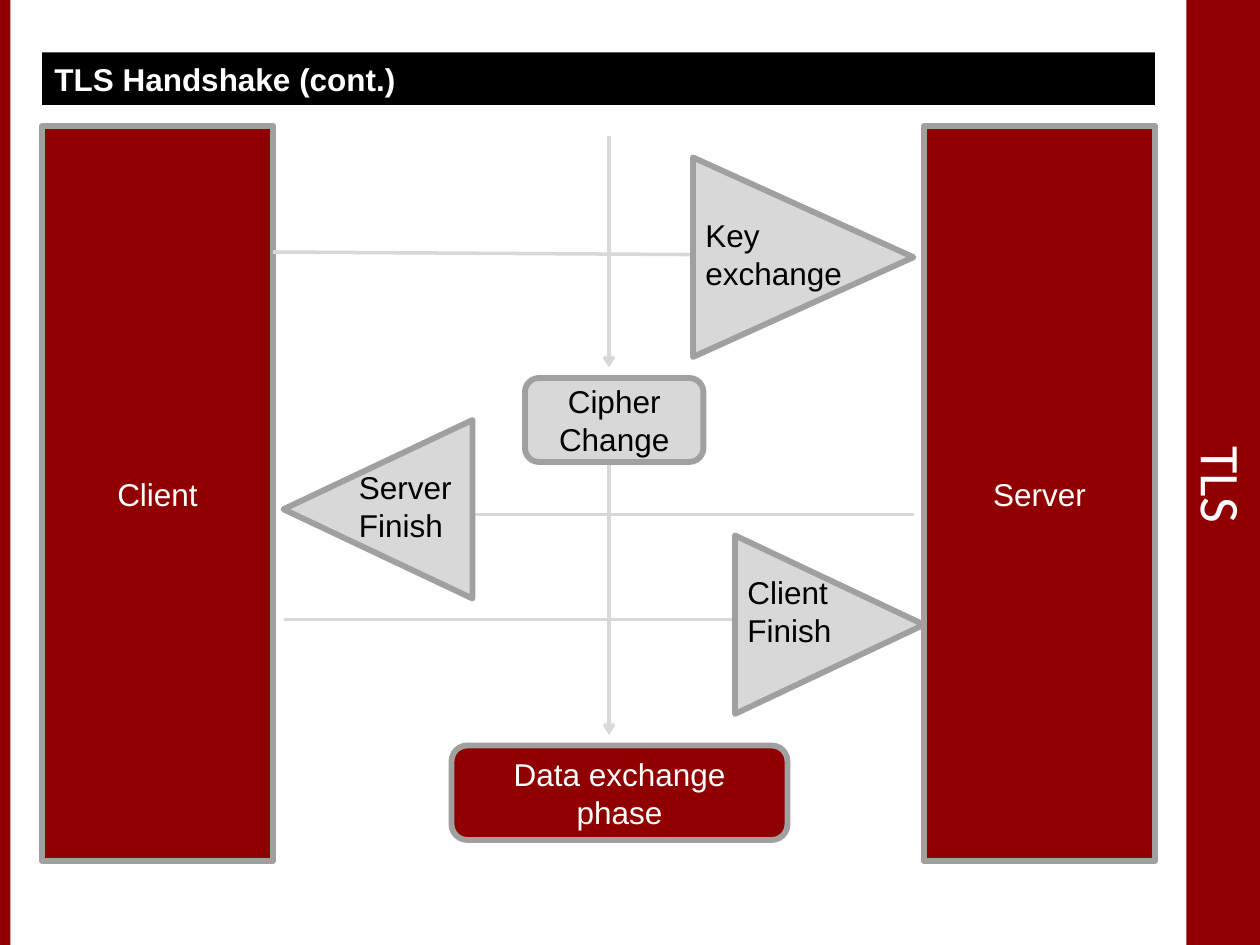
from dataclasses import dataclass

from pptx import Presentation
from pptx import util as u
from pptx.dml.color import RGBColor
from pptx.enum import shapes, text
from pptx.oxml.ns import qn
from lxml import etree

PX = 9525  # EMU per px, 96 px to the inch
W, H = 960, 720
SHAPE = shapes.MSO_SHAPE
ALIGN = text.PP_ALIGN
ANCHOR = text.MSO_ANCHOR


@dataclass(frozen=True)
class Theme:
    red: str = "900000"
    grey: str = "D8D8D8"
    border: str = "A0A0A0"
    white: str = "FFFFFF"
    black: str = "000000"
    body_font: str = "Arial"
    title_font: str = "Calibri"
    body_size: int = 18
    title_size: int = 32
    border_width: float = 3.35
    line_width: int = 2


T = Theme()


def emu(*lengths):
    return [u.Emu(round(v * PX)) for v in lengths]


def rgb(value):
    return RGBColor.from_string(value)


def turned(box):
    """Box that covers the given one after a quarter turn about its centre."""
    x, y, w, h = box
    return x + (w - h) / 2, y + (h - w) / 2, h, w


def set_text(sp, words, color, align=ALIGN.LEFT, anchor=ANCHOR.TOP, bold=False):
    tf = sp.text_frame
    tf.word_wrap = True
    tf.vertical_anchor = anchor
    tf.text = words
    for p in tf.paragraphs:
        p.alignment = align
        p.font.name, p.font.size, p.font.bold = T.body_font, u.Pt(T.body_size), bold
        p.font.color.rgb = rgb(color)


def add_box(s, kind, box, fill, bordered=True):
    sp = s.shapes.add_shape(kind, *emu(*box))
    sp.shadow.inherit = False
    sp.fill.solid()
    sp.fill.fore_color.rgb = rgb(fill)
    if bordered:
        sp.line.color.rgb = rgb(T.border)
        sp.line.width = u.Pt(T.border_width)
    else:
        sp.line.fill.background()
    return sp


def add_node(s, kind, box, words, fill, color):
    sp = add_box(s, kind, box, fill)
    set_text(sp, words, color, ALIGN.CENTER, ANCHOR.MIDDLE)


def add_line(s, start, end, arrow=False):
    cn = s.shapes.add_connector(shapes.MSO_CONNECTOR.STRAIGHT, *emu(*start, *end))
    cn.line.color.rgb = rgb(T.grey)
    cn.line.width = u.Pt(T.line_width)
    if arrow:
        etree.SubElement(cn.line._get_or_add_ln(), qn("a:tailEnd"), type="arrow")
    etree.SubElement(cn._element.spPr, qn("a:effectLst"))


def add_message(s, box, words, label, rotation):
    """Triangle turned sideways to fill box, with a label placed relative to it."""
    sp = add_box(s, SHAPE.ISOSCELES_TRIANGLE, turned(box), T.grey)
    sp.rotation = rotation
    x, y = box[:2]
    dx, dy, label_w = label
    tb = s.shapes.add_textbox(*emu(x + dx, y + dy, label_w, 68))
    set_text(tb, words, T.black)
    tb.text_frame.auto_size = text.MSO_AUTO_SIZE.SHAPE_TO_FIT_TEXT


def add_frame(s, box):
    """Side bars and the title, turned to read downwards."""
    x, y, w, h = box
    bar = 56
    for left, width in ((x + w - bar, bar), (x, 8)):
        add_box(s, SHAPE.RECTANGLE, (left, y, width, h), T.red, bordered=False)

    title = s.shapes.title
    s.shapes._spTree.append(title._element)  # in front of the bars
    title_box = turned((x + w - bar, y + 32, bar, 616))
    title.left, title.top, title.width, title.height = emu(*title_box)
    title.rotation = 90
    tf = title.text_frame
    tf.text = "TLS"
    tf.auto_size = text.MSO_AUTO_SIZE.NONE
    tf.vertical_anchor = ANCHOR.MIDDLE
    p = tf.paragraphs[0]
    p.alignment = ALIGN.CENTER
    font = p.runs[0].font
    font.name, font.size = T.title_font, u.Pt(T.title_size)
    font.color.rgb = rgb(T.white)
    font._element.set("cap", "small")


def add_heading(s, box):
    sp = add_box(s, SHAPE.RECTANGLE, box, T.black, bordered=False)
    set_text(sp, "TLS Handshake (cont.)", T.white, anchor=ANCHOR.MIDDLE, bold=True)


def add_handshake(s, box):
    x, y, w, h = box
    party = 176
    mid = x + 432

    # The two parties
    for left, name in ((x, "Client"), (x + w - party, "Server")):
        add_node(s, SHAPE.RECTANGLE, (left, y, party, h), name, T.red, T.white)

    # Message lines, then the phase arrows down the middle
    for x1, x2, y1, y2 in ((176, 496, 96, 98), (328, 664, 296, 296), (184, 584, 376, 376)):
        add_line(s, (x + x1, y + y1), (x + x2, y + y2))
    for top, bottom in ((8, 184), (256, 464)):
        add_line(s, (mid, y + top), (mid, y + bottom), arrow=True)

    # Phases
    add_node(s, SHAPE.ROUNDED_RECTANGLE, (x + 368, y + 192, 136, 64),
             "Cipher Change", T.grey, T.black)
    add_node(s, SHAPE.ROUNDED_RECTANGLE, (x + 312, y + 472, 256, 72),
             "Data exchange phase", T.red, T.white)

    # Messages
    add_message(s, (x + 496, y + 24, 168, 152), "Key\nexchange", (0, 40, 136), 90)
    add_message(s, (x + 184, y + 224, 144, 136), "Server Finish", (48, 32, 112), 270)
    add_message(s, (x + 528, y + 312, 144, 136), "Client Finish", (0, 24, 112), 90)


def main():
    prs = Presentation()
    prs.slide_width, prs.slide_height = emu(W, H)
    s = prs.slides.add_slide(prs.slide_layouts[5])
    add_frame(s, (0, 0, W, H))
    add_heading(s, (32, 40, 848, 40))
    add_handshake(s, (32, 96, 848, 560))
    prs.save("out.pptx")


if __name__ == "__main__":
    main()
